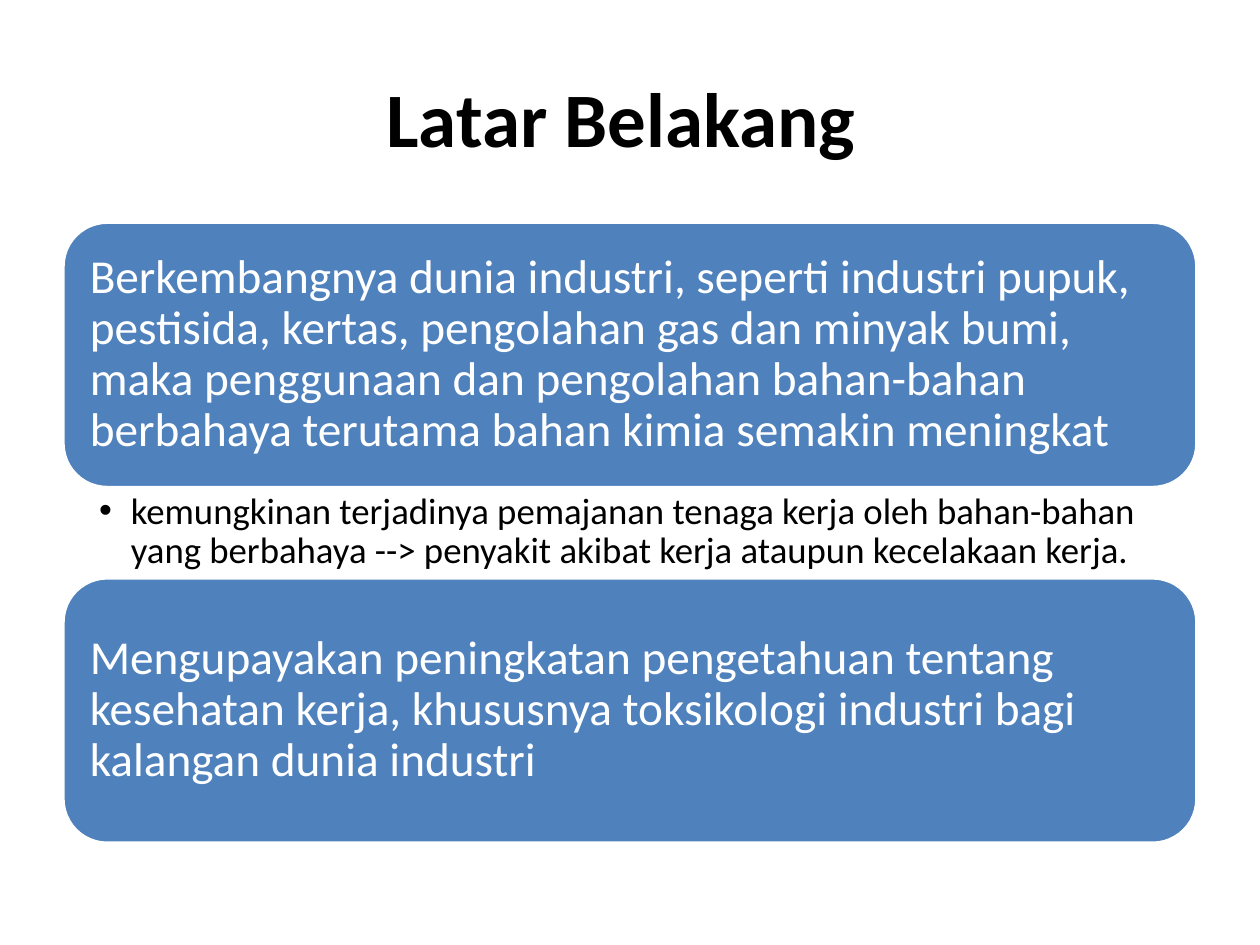
from lxml import etree
from pptx import Presentation
from pptx.dml.color import RGBColor
from pptx.enum.shapes import MSO_SHAPE
from pptx.enum.text import MSO_ANCHOR, PP_ALIGN
from pptx.oxml.ns import qn
from pptx.util import Cm, Pt

ROUNDED = MSO_SHAPE.ROUNDED_RECTANGLE
MIDDLE, TOP = MSO_ANCHOR.MIDDLE, MSO_ANCHOR.TOP
LEFT, CENTER = PP_ALIGN.LEFT, PP_ALIGN.CENTER

FONT = "Calibri"
COLORS = {"panel": "4F81BD", "light": "FFFFFF", "dark": "000000"}

# Shared column, and the stack of panel, bullet, panel
MARGIN, WIDTH = Cm(1.27), Cm(22.86)
STACK_TOP, PANEL_HEIGHT, BULLET_HEIGHT = Cm(4.48), Cm(5.35), Cm(1.82)


def color(name):
    return RGBColor.from_string(COLORS[name])


def write(shape, text, size, ink, anchor=MIDDLE, align=LEFT,
          insets=(0.25, 0.13, 0.25, 0.13), spacing=0.9, bold=False):
    """Fill a shape with one paragraph; insets are left, top, right, bottom in cm."""
    frame = shape.text_frame
    frame.word_wrap = True
    frame.vertical_anchor = anchor
    (frame.margin_left, frame.margin_top,
     frame.margin_right, frame.margin_bottom) = map(Cm, insets)
    paragraph = frame.paragraphs[0]
    paragraph.alignment = align
    paragraph.line_spacing = spacing
    run = paragraph.add_run()
    run.text = text
    run.font.name = FONT
    run.font.size = Pt(size)
    run.font.bold = bold
    run.font.color.rgb = color(ink)
    return paragraph


def add_title(slide, text):
    title = slide.shapes.add_textbox(MARGIN, Cm(0.76), WIDTH, Cm(3.18))
    write(title, text, 44, "dark", align=CENTER, spacing=1, bold=True)


def add_panel(slide, top, text):
    panel = slide.shapes.add_shape(ROUNDED, MARGIN, top, WIDTH, PANEL_HEIGHT)
    panel.shadow.inherit = False
    panel.fill.solid()
    panel.fill.fore_color.rgb = color("panel")
    panel.line.color.rgb = color("light")
    panel.line.width = Pt(2)
    write(panel, text, 27, "light", insets=(0.28,) * 4)


def add_bullet(slide, top, text):
    bullet = slide.shapes.add_textbox(MARGIN, top, WIDTH, BULLET_HEIGHT)
    paragraph = write(bullet, text, 21, "dark", anchor=TOP,
                      insets=(0.73, 0.1, 0.53, 0.1))
    # Hanging bullet
    paragraph.level = 1
    properties = paragraph._p.get_or_add_pPr()
    properties.set("marL", str(Cm(0.64)))
    properties.set("indent", str(-Cm(0.64)))
    etree.SubElement(properties, qn("a:buFont"), typeface="Arial")
    etree.SubElement(properties, qn("a:buChar"), char="•")


def main():
    presentation = Presentation()
    presentation.slide_width, presentation.slide_height = Cm(25.4), Cm(19.05)
    slide = presentation.slides.add_slide(presentation.slide_layouts[6])

    add_title(slide, "Latar Belakang ")

    # Cause, consequence and response
    bullet_top = STACK_TOP + PANEL_HEIGHT
    add_panel(slide, STACK_TOP,
              "Berkembangnya dunia industri, seperti industri pupuk, pestisida, "
              "kertas, pengolahan gas dan minyak bumi, maka penggunaan dan "
              "pengolahan bahan-bahan berbahaya terutama bahan kimia semakin "
              "meningkat")
    add_bullet(slide, bullet_top,
               "kemungkinan terjadinya pemajanan tenaga kerja oleh bahan-bahan "
               "yang berbahaya --> penyakit akibat kerja ataupun kecelakaan kerja.")
    add_panel(slide, bullet_top + BULLET_HEIGHT,
              "Mengupayakan peningkatan pengetahuan tentang kesehatan kerja, "
              "khususnya toksikologi industri bagi kalangan dunia industri")

    presentation.save("out.pptx")


if __name__ == "__main__":
    main()
